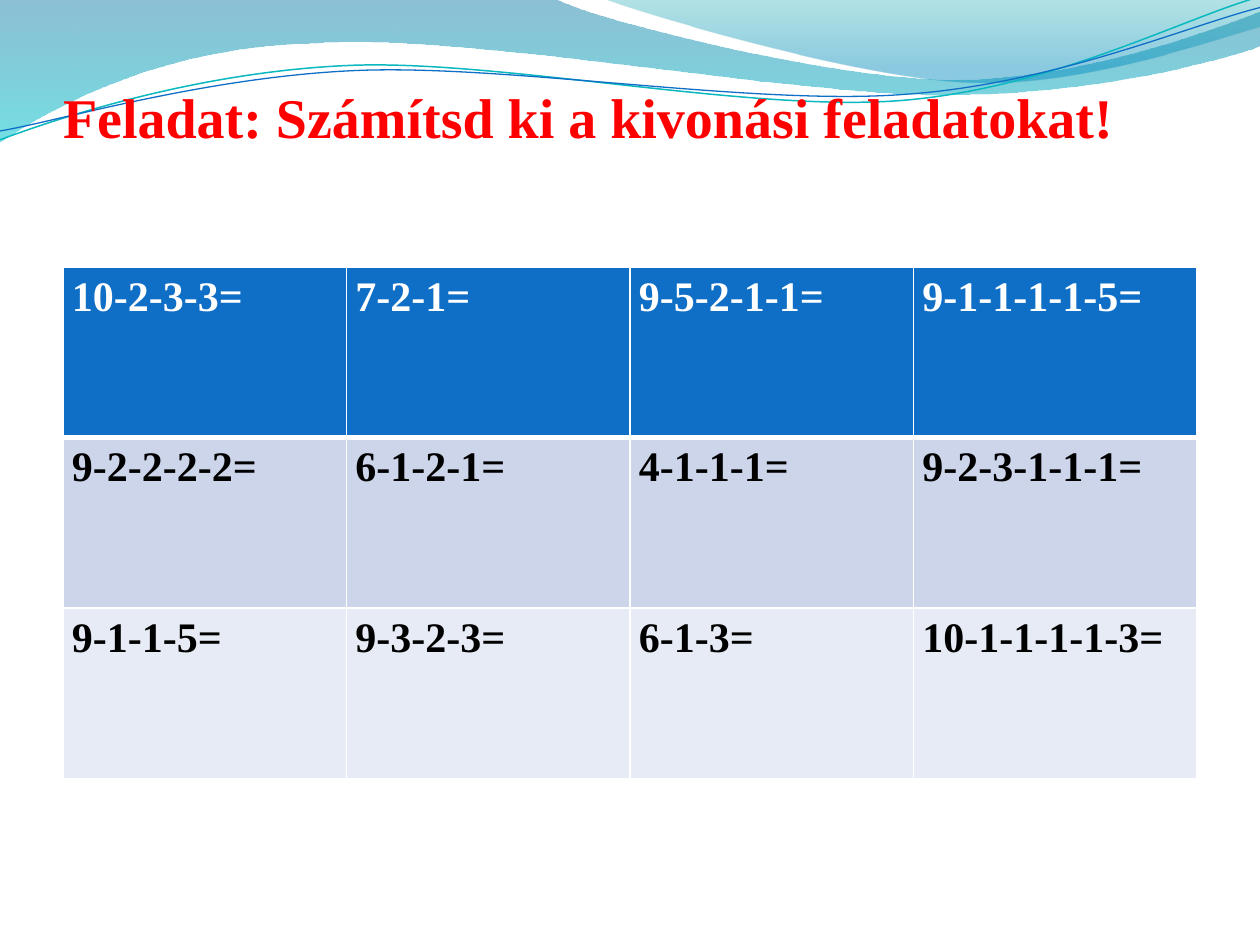
"""Build a subtraction worksheet slide with a wave banner, a title and a table of exercises."""
from pptx import Presentation
from pptx.dml.color import RGBColor
from pptx.enum.text import MSO_ANCHOR, PP_ALIGN
from pptx.oxml.ns import qn
from pptx.util import Inches, Pt
from lxml.etree import SubElement

TITLE = "Feladat: Számítsd ki a kivonási feladatokat!"
EXERCISES = [
    ["10-2-3-3=", "7-2-1=", "9-5-2-1-1=", "9-1-1-1-1-5="],
    ["9-2-2-2-2=", "6-1-2-1=", "4-1-1-1=", "9-2-3-1-1-1="],
    ["9-1-1-5=", "9-3-2-3=", "6-1-3=", "10-1-1-1-1-3="],
]
THEME = {
    "font": "Times New Roman", "title_size": 32, "cell_size": 24,
    "title": "FF0000", "border": "FFFFFF",
    "row_fills": ["0F6FC6", "CCD5EA", "E7EBF5"],
    "row_texts": ["FFFFFF", "000000", "000000"],
    "left_wave": [(0, "0074A1", 45), (1, "00C6CF", 55)],
    "right_wave": [(0, "00A1A9", 30), (0.8, "008BBF", 45)],
    "teal_line": ("0AB8BF", 0.85), "blue_line": ("0F6FC6", 0.75),
}
WAVES = [
    ("left_wave", [
        [(0, 0)], [(4.4, -0.01)],
        [(4.76, 0.17), (6.64, 0.63), (7.58, 0.63)],
        [(8.53, 0.63), (9.58, 0.26), (10, 0.09)],
        [(10.01, 0.36)],
        [(9.83, 0.44), (8.7, 0.76), (7.46, 0.75)],
        [(6.22, 0.75), (3.82, 0.28), (2.57, 0.34)],
        [(1.29, 0.36), (0.46, 0.83), (-0.01, 1.13)],
        [(0, 0)]]),
    ("right_wave", [
        [(4.79, -0.01)],
        [(5.09, 0.11), (6.82, 0.62), (7.69, 0.65)],
        [(8.56, 0.69), (9.61, 0.32), (10, 0.21)],
        [(10, 0)], [(4.79, -0.01)]]),
]
RIPPLES = [
    ("teal_line", [
        [(0, 1.11)],
        [(0.48, 0.93), (1.58, 0.57), (2.77, 0.52)],
        [(3.95, 0.47), (5.93, 0.89), (7.13, 0.8)],
        [(8.33, 0.71), (9.38, 0.15), (9.98, -0.02)]]),
    ("blue_line", [
        [(0, 1.04)],
        [(0.47, 0.96), (1.64, 0.61), (2.83, 0.56)],
        [(4.03, 0.51), (5.97, 0.84), (7.17, 0.75)],
        [(8.36, 0.67), (9.41, 0.21), (10, 0.06)]]),
]


def add_outline(slide, segments, close):
    start, *ends = [tuple(map(Inches, segment[-1])) for segment in segments]
    builder = slide.shapes.build_freeform(*start, scale=1.0)
    builder.add_line_segments(ends, close=close)
    outline = builder.convert_to_shape()
    outline.shadow.inherit = False
    steps = list(outline._element.spPr.iter(qn("a:lnTo")))
    for step, segment in zip(steps, segments[1:]):
        if len(segment) == 3:
            step.tag = qn("a:cubicBezTo")
            step.remove(step[0])
            for x, y in segment:
                SubElement(step, qn("a:pt"), x=str(Inches(x) - outline.left),
                           y=str(Inches(y) - outline.top))
    return outline


def add_wave(slide, style, segments):
    wave = add_outline(slide, segments, True)
    wave.line.fill.background()
    wave.fill.gradient()
    wave.fill.gradient_angle = 270
    for stop, (position, color, _) in zip(wave.fill.gradient_stops, THEME[style]):
        stop.position = position
        stop.color.rgb = RGBColor.from_string(color)
    colors = wave._element.spPr.find(qn("a:gradFill")).iter(qn("a:srgbClr"))
    for color, (_, _, opacity) in zip(colors, THEME[style]):
        SubElement(color, qn("a:alpha"), val=str(opacity * 1000))


def add_ripple(slide, style, segments):
    color, width = THEME[style]
    ripple = add_outline(slide, segments, False)
    ripple.fill.background()
    ripple.line.color.rgb = RGBColor.from_string(color)
    ripple.line.width = Pt(width)


def write(paragraph, text, size, color):
    run = paragraph.add_run()
    run.text = text
    run.font.name = THEME["font"]
    run.font.size = Pt(size)
    run.font.bold = True
    run.font.color.rgb = RGBColor.from_string(color)


def set_title(slide):
    title = slide.shapes.title
    slide.shapes._spTree.append(title._element)
    title.left, title.top, title.width, title.height = map(Inches, (0.5, 0.39, 9, 1.63))
    frame = title.text_frame
    frame.word_wrap = True
    frame.vertical_anchor = MSO_ANCHOR.BOTTOM
    frame.margin_left = frame.margin_right = 0
    frame.margin_top, frame.margin_bottom = Inches(0.05), Inches(0.83)
    paragraph = frame.paragraphs[0]
    paragraph.alignment = PP_ALIGN.LEFT
    paragraph.line_spacing = 1.0
    write(paragraph, TITLE, THEME["title_size"], THEME["title"])


def set_borders(cell, widths):
    properties = cell._tc.get_or_add_tcPr()
    for side, width in zip("LRTB", widths):
        border = SubElement(properties, qn(f"a:ln{side}"), w=str(Pt(width)))
        fill = SubElement(border, qn("a:solidFill"))
        SubElement(fill, qn("a:srgbClr"), val=THEME["border"])


def add_exercises(slide):
    rows, columns = len(EXERCISES), len(EXERCISES[0])
    table = slide.shapes.add_table(rows, columns, Inches(0.5), Inches(2.12),
                                   Inches(9), Inches(4.06)).table
    for r, exercises in enumerate(EXERCISES):
        top, bottom = (3 if r == 1 else 1), (3 if r == 0 else 1)
        for c, exercise in enumerate(exercises):
            cell = table.cell(r, c)
            set_borders(cell, (1, 1, top, bottom))
            cell.fill.solid()
            cell.fill.fore_color.rgb = RGBColor.from_string(THEME["row_fills"][r])
            cell.margin_left = cell.margin_right = Inches(0.07)
            cell.margin_top = cell.margin_bottom = 0
            paragraph = cell.text_frame.paragraphs[0]
            paragraph.line_spacing = 1.15
            write(paragraph, exercise, THEME["cell_size"], THEME["row_texts"][r])


def main():
    presentation = Presentation()
    presentation.slide_width, presentation.slide_height = Inches(10), Inches(7.5)
    slide = presentation.slides.add_slide(presentation.slide_layouts[5])
    for style, segments in WAVES:
        add_wave(slide, style, segments)
    for style, segments in RIPPLES:
        add_ripple(slide, style, segments)
    set_title(slide)
    add_exercises(slide)
    presentation.save("out.pptx")


if __name__ == "__main__":
    main()
